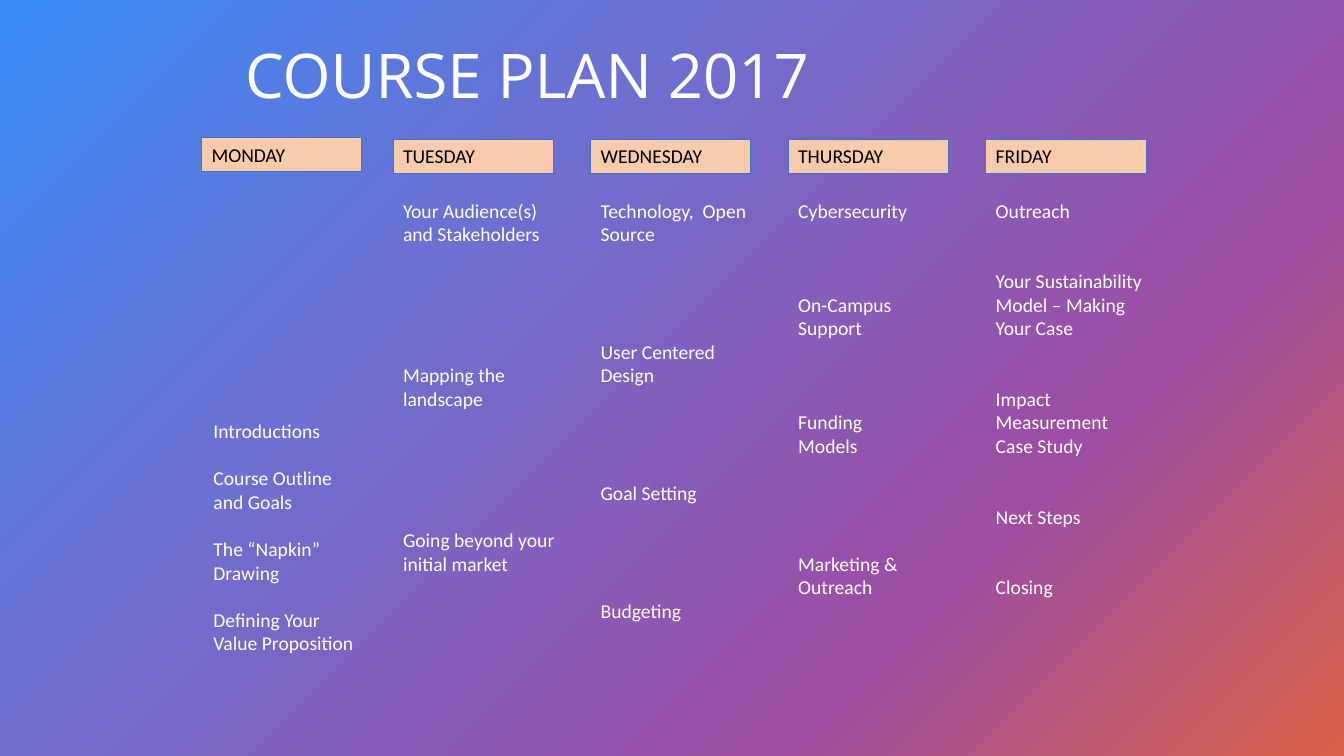
"""Build the weekly course plan slide."""
from lxml import etree
from pptx import Presentation
from pptx.dml.color import RGBColor
from pptx.enum.shapes import MSO_SHAPE as Preset
from pptx.enum.text import MSO_ANCHOR as Anchor, MSO_AUTO_SIZE as AutoSize, PP_ALIGN as Align
from pptx.oxml.ns import qn
from pptx.util import Pt

TITLE = "COURSE PLAN 2017"
# Each topic is paired with the number of empty lines above it.
WEEK = {
    "MONDAY": [(0, "Introductions"), (1, "Course Outline and Goals"),
               (1, "The “Napkin” Drawing"), (1, "Defining Your Value Proposition")],
    "TUESDAY": [(0, "Your Audience(s) and Stakeholders"), (5, "Mapping the landscape"),
                (5, "Going beyond your initial market")],
    "WEDNESDAY": [(0, "Technology,  Open Source"), (4, "User Centered Design"),
                  (4, "Goal Setting"), (4, "Budgeting")],
    "THURSDAY": [(0, "Cybersecurity"), (3, "On-Campus Support"), (3, "Funding"),
                 (0, "Models"), (4, "Marketing & Outreach")],
    "FRIDAY": [(0, "Outreach"), (2, "Your Sustainability Model – Making Your Case"),
               (2, "Impact Measurement Case Study"), (2, "Next Steps"), (2, "Closing")],
}
GRADIENT = [(0, "D96246"), (28, "9C4DA4"), (67, "6C70D1"), (100, "378BF7")]
WHITE = RGBColor(0xFF, 0xFF, 0xFF)
BLACK = RGBColor(0x00, 0x00, 0x00)
PEACH = RGBColor(0xF8, 0xCB, 0xAD)
BLUE = RGBColor(0x44, 0x72, 0xC4)

PAGE_WIDTH, PAGE_HEIGHT = 960, 540
TUESDAY_LEFT, COLUMN_STEP = 280.8, 141.12
HEADER_WIDTH, HEADER_HEIGHT = 114.5, 24.3
LINE_HEIGHT = 16.83


def write(box, lines, *, size=14, font="Calibri", color=WHITE, anchor=Anchor.TOP,
          spacing=None, auto_size=AutoSize.NONE):
    """Fill a box with (empty lines above, text) paragraphs."""
    frame = box.text_frame
    frame.word_wrap = True
    frame.auto_size = auto_size
    frame.vertical_anchor = anchor
    for index, (gap, text) in enumerate(lines):
        para = frame.paragraphs[0] if index == 0 else frame.add_paragraph()
        para.alignment = Align.LEFT
        para.line_spacing = spacing
        if gap:
            para.space_before = Pt(gap * LINE_HEIGHT)
        span = para.add_run()
        span.text = text
        span.font.size = Pt(size)
        span.font.name = font
        span.font.color.rgb = color


def add_text(page, place, lines, **style):
    """Add a text box at a place given in points."""
    write(page.shapes.add_textbox(*map(Pt, place)), lines, **style)


def add_panel(page, place):
    """Add a plain rectangle without a shadow."""
    panel = page.shapes.add_shape(Preset.RECTANGLE, *map(Pt, place))
    panel.shadow.inherit = False
    return panel


def add_backdrop(page):
    """Cover the page with the diagonal gradient."""
    backdrop = add_panel(page, (0, 0, PAGE_WIDTH, PAGE_HEIGHT))
    backdrop.line.fill.background()
    backdrop.fill.gradient()
    backdrop.fill.gradient_angle = 135
    stops = backdrop.element.spPr.find(".//" + qn("a:gsLst"))
    for stop in list(stops):
        stops.remove(stop)
    for percent, color in GRADIENT:
        stop = etree.SubElement(stops, qn("a:gs"), pos=str(percent * 1000))
        etree.SubElement(stop, qn("a:srgbClr"), val=color)


def add_day(page, index, day, topics):
    """Add one day's header and its topics."""
    left = TUESDAY_LEFT + (index - 1) * COLUMN_STEP
    header_place, topics_place = (left, 99.4), (left, 138.2, 123.1, 312)
    if index == 0:
        header_place, topics_place = (144, 98.3), (145.4, 295.9, 120.2, 188.6)
    add_text(page, topics_place, topics)
    header = add_panel(page, (*header_place, HEADER_WIDTH, HEADER_HEIGHT))
    header.fill.solid()
    header.fill.fore_color.rgb = PEACH
    header.line.color.rgb = BLUE
    header.line.width = Pt(0.75)
    write(header, [(0, day)], color=BLACK, auto_size=AutoSize.SHAPE_TO_FIT_TEXT)


def main():
    """Assemble and save the deck."""
    deck = Presentation()
    deck.slide_width, deck.slide_height = Pt(PAGE_WIDTH), Pt(PAGE_HEIGHT)
    page = deck.slides.add_slide(deck.slide_layouts[6])
    add_backdrop(page)
    add_text(page, (168, 26.6, 648, 59), [(0, TITLE)], size=44, font="Open Sans",
             anchor=Anchor.MIDDLE, spacing=0.9)
    for index, (day, topics) in enumerate(WEEK.items()):
        add_day(page, index, day, topics)
    deck.save("out.pptx")


if __name__ == "__main__":
    main()
